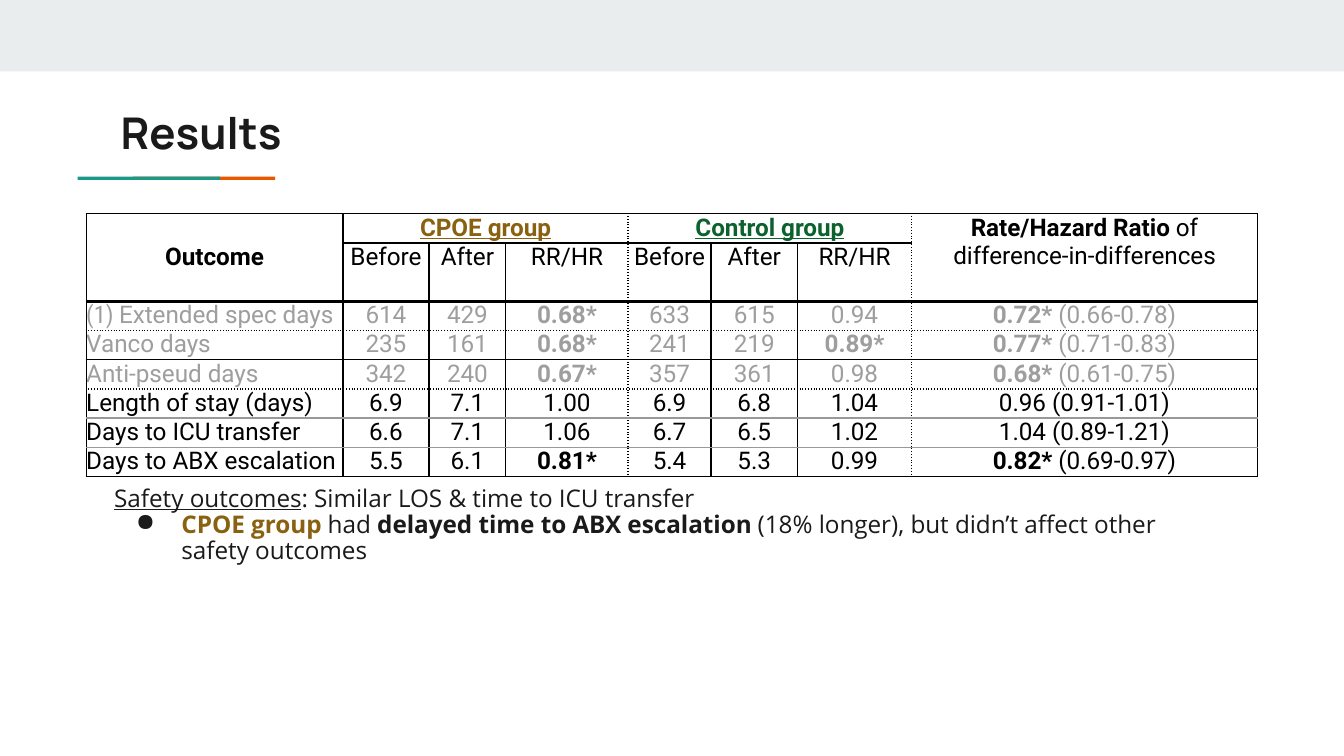
import pptx
import pptx.util
import pptx.dml.color
import pptx.enum.shapes
import pptx.enum.text
import pptx.oxml
import pptx.oxml.ns
from lxml import etree

Cm = pptx.util.Cm
Pt = pptx.util.Pt
RGBColor = pptx.dml.color.RGBColor
ALIGN = pptx.enum.text.PP_ALIGN
qn = pptx.oxml.ns.qn

BLACK = RGBColor(0x00, 0x00, 0x00)
INK = RGBColor(0x1A, 0x1A, 0x1A)
MUTED = RGBColor(0x9E, 0x9E, 0x9E)
RULE_GREY = RGBColor(0x99, 0x99, 0x99)
BAND = RGBColor(0xE9, 0xED, 0xEE)
ORANGE = RGBColor(0xEB, 0x56, 0x00)
TEAL = RGBColor(0x1A, 0x99, 0x88)
GOLD = RGBColor(0x89, 0x61, 0x10)
GREEN = RGBColor(0x0C, 0x62, 0x2E)


def add_span(para, text, font, size, color, bold=False, underline=False):
    span = para.add_run()
    span.text = text
    span.font.name = font
    span.font.size = Pt(size)
    span.font.color.rgb = color
    span.font.bold = bold
    span.font.underline = underline


def add_border(cell, side, width, dash, color):
    """Draw one edge of a cell; side is L, R, T or B."""
    line = etree.SubElement(cell._tc.get_or_add_tcPr(), qn(f"a:ln{side}"), w=str(Pt(width)))
    fill = etree.SubElement(line, qn("a:solidFill"))
    etree.SubElement(fill, qn("a:srgbClr"), val=str(color))
    etree.SubElement(line, qn("a:prstDash"), val=dash)


deck = pptx.Presentation()
deck.slide_width = Cm(25.4)
deck.slide_height = Cm(14.29)
page = deck.slides.add_slide(deck.slide_layouts[6])

# Top band and the two overlapping accent bars
for left, top, width, height, color in (
    (0, 0, 25.4, 1.35, BAND),
    (2.51, 3.34, 2.69, 0.06, ORANGE),
    (1.47, 3.34, 2.69, 0.06, TEAL),
):
    bar = page.shapes.add_shape(
        pptx.enum.shapes.MSO_SHAPE.RECTANGLE, Cm(left), Cm(top), Cm(width), Cm(height))
    bar.shadow.inherit = False
    bar.fill.solid()
    bar.fill.fore_color.rgb = color
    bar.line.fill.background()

# Title and notes boxes
frames = []
for left, top, width, height in ((2.03, 1.75, 10.67, 1.5), (1.91, 8.94, 21.31, 2.18)):
    box = page.shapes.add_textbox(Cm(left), Cm(top), Cm(width), Cm(height))
    frame = box.text_frame
    frame.word_wrap = True
    frame.margin_left = frame.margin_right = Cm(0.25)
    frame.margin_top = frame.margin_bottom = Cm(0.25)
    frames.append(frame)
title, notes = frames

add_span(title.paragraphs[0], "Results", "Manrope", 23.4, INK, bold=True)

summary = notes.paragraphs[0]
add_span(summary, "Safety outcomes", "Open Sans", 13, INK, underline=True)
add_span(summary, ": Similar LOS & time to ICU transfer", "Open Sans", 13, INK)

finding = notes.add_paragraph()
for text, color, bold in (
    ("CPOE group", GOLD, True),
    (" had ", INK, False),
    ("delayed time to ABX escalation", INK, True),
    (" (18% longer), but didn’t affect other safety outcomes", INK, False),
):
    add_span(finding, text, "Open Sans", 13, color, bold)
finding_format = finding._p.get_or_add_pPr()
finding_format.set("marL", str(Cm(1.27)))
finding_format.set("indent", str(Cm(-0.86)))
bullet_color = etree.SubElement(finding_format, qn("a:buClr"))
etree.SubElement(bullet_color, qn("a:srgbClr"), val=str(INK))
etree.SubElement(finding_format, qn("a:buChar"), char="●")
for para in notes.paragraphs:
    para.line_spacing = 0.9

# Results table
COLUMN_WIDTHS = (4.85, 1.63, 1.45, 2.31, 1.57, 1.63, 2.16, 6.53)
ROW_HEIGHTS = (0.54, 1.07) + (0.54,) * 6
HEADINGS = ("Before", "After", "RR/HR") * 2
MUTED_ROWS = 3
OUTCOMES = (
    ("Extended spec days", "614", "429", "0.68*", "633", "615", "0.94", "0.72* (0.66-0.78)"),
    ("Vanco days", "235", "161", "0.68*", "241", "219", "0.89*", "0.77* (0.71-0.83)"),
    ("Anti-pseud days", "342", "240", "0.67*", "357", "361", "0.98", "0.68* (0.61-0.75)"),
    ("Length of stay (days)", "6.9", "7.1", "1.00", "6.9", "6.8", "1.04", "0.96 (0.91-1.01)"),
    ("Days to ICU transfer", "6.6", "7.1", "1.06", "6.7", "6.5", "1.02", "1.04 (0.89-1.21)"),
    ("Days to ABX escalation", "5.5", "6.1", "0.81*", "5.4", "5.3", "0.99", "0.82* (0.69-0.97)"),
)

table = page.shapes.add_table(
    len(ROW_HEIGHTS), len(COLUMN_WIDTHS), Cm(1.63), Cm(4.04),
    Cm(sum(COLUMN_WIDTHS)), Cm(sum(ROW_HEIGHTS))).table
table.first_row = False
table.horz_banding = False
for column, width in zip(table.columns, COLUMN_WIDTHS):
    column.width = Cm(width)
for row, height in zip(table.rows, ROW_HEIGHTS):
    row.height = Cm(height)
for first, last in (((0, 0), (1, 0)), ((0, 1), (0, 3)), ((0, 4), (0, 6)), ((0, 7), (1, 7))):
    table.cell(*first).merge(table.cell(*last))

# Grid lines, counted from the left edge and from the top edge
THIN = (0.75, "solid", BLACK)
MEDIUM = (1, "solid", BLACK)
THICK = (1.5, "solid", BLACK)
DOTTED = (1, "sysDot", BLACK)
PALE = (0.75, "solid", RULE_GREY)
VERTICAL = (THIN, MEDIUM, THIN, THIN, DOTTED, THIN, THIN, DOTTED, THIN)
HORIZONTAL = (THIN, THIN, THICK, DOTTED, THIN, DOTTED, PALE, PALE, THIN)

for row in range(len(ROW_HEIGHTS)):
    for column in range(len(COLUMN_WIDTHS)):
        cell = table.cell(row, column)
        cell.margin_left = cell.margin_right = cell.margin_top = cell.margin_bottom = 0
        if not cell.is_spanned:
            right = column + (cell.span_width if cell.is_merge_origin else 1)
            bottom = row + (cell.span_height if cell.is_merge_origin else 1)
            add_border(cell, "L", *VERTICAL[column])
            add_border(cell, "R", *VERTICAL[right])
            add_border(cell, "T", *HORIZONTAL[row])
            add_border(cell, "B", *HORIZONTAL[bottom])
            is_label = row > 1 and column == 0
            cell.text_frame.paragraphs[0].alignment = ALIGN.LEFT if is_label else ALIGN.CENTER
        cell.fill.background()

for column, text, color, underline in (
    (0, "Outcome", BLACK, False),
    (1, "CPOE group", GOLD, True),
    (4, "Control group", GREEN, True),
    (7, "Rate/Hazard Ratio", BLACK, False),
):
    para = table.cell(0, column).text_frame.paragraphs[0]
    add_span(para, text, "Roboto", 13, color, True, underline)
add_span(para, " of difference-in-differences", "Roboto", 13, BLACK)
table.cell(0, 0).vertical_anchor = pptx.enum.text.MSO_ANCHOR.MIDDLE

for column, heading in enumerate(HEADINGS, start=1):
    add_span(table.cell(1, column).text_frame.paragraphs[0], heading, "Roboto", 13, BLACK)

add_span(table.cell(2, 0).text_frame.paragraphs[0], "(1) ", "Roboto Condensed", 13, MUTED)
for index, outcome in enumerate(OUTCOMES):
    color = MUTED if index < MUTED_ROWS else BLACK
    for column, text in enumerate(outcome):
        para = table.cell(index + 2, column).text_frame.paragraphs[0]
        # Significant values carry a star and are bold
        value, star, interval = text.partition("*")
        add_span(para, value + star, "Roboto", 13, color, bold=bool(star))
        if interval:
            add_span(para, interval, "Roboto", 13, color)

deck.save("out.pptx")
